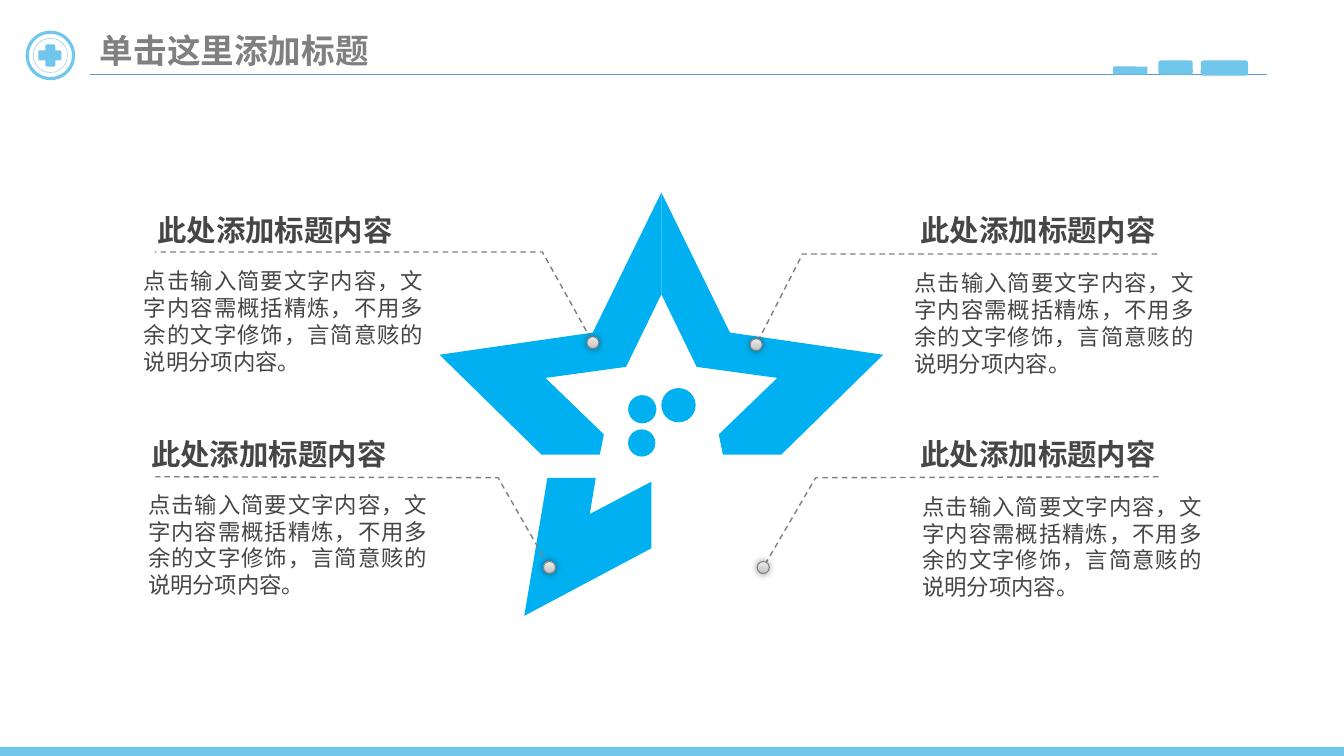
from dataclasses import dataclass

from lxml import etree
from pptx import Presentation
from pptx import util as u
from pptx.dml.color import RGBColor
from pptx.enum import dml, shapes, text
from pptx.oxml import parse_xml
from pptx.oxml.ns import nsdecls, qn

SCALE = 9144


@dataclass(frozen=True)
class Theme:
    face: str = "Noto Sans CJK SC"
    sky: str = "70C6EB"
    rule: str = "5B9BD5"
    star: str = "00B0F0"
    gray: str = "808080"
    ink: str = "464646"
    title: int = 24
    head: int = 21
    body: int = 16


THEME = Theme()
KIND = shapes.MSO_SHAPE
HEAD = "此处添加标题内容"
BODY = "点击输入简要文字内容，文字内容需概括精炼，不用多余的文字修饰，言简意赅的说明分项内容。"

AXIS = 656
WING = [(724, 330), (656, 191), (656, 292), (691, 364), (771, 375),
        (713, 431), (717, 451), (775, 451), (876, 352)]
LEG = [(646, 478), (585, 510), (591, 474), (543, 474), (520, 611), (646, 544)]
DOTS = [(623, 392, 28), (656, 385, 34), (623, 426, 27)]
BARS = [(1104, 66, 34, 8), (1149, 60, 34, 14), (1191, 60, 47, 15)]
CALLS = [
    ((143, 186, 287, 67), (133, 260), [(588, 340), (538, 250), (154, 250)]),
    ((900, 186, 274, 66), (897, 262), [(750, 342), (796, 252), (1149, 252)]),
    ((900, 408, 274, 66), (905, 484), [(757, 563), (809, 474), (1152, 473)]),
    ((137, 408, 287, 67), (137, 482), [(545, 563), (494, 474), (154, 473)]),
]

SHEEN = f"""<a:gradFill {nsdecls('a')} rotWithShape="1"><a:gsLst>
<a:gs pos="0"><a:srgbClr val="BDBDBD"/></a:gs>
<a:gs pos="35000"><a:srgbClr val="D1D1D1"/></a:gs>
<a:gs pos="100000"><a:srgbClr val="EEEEEE"/></a:gs>
</a:gsLst><a:lin ang="16200000" scaled="1"/></a:gradFill>"""
SHADE = f"""<a:outerShdw {nsdecls('a')} blurRad="63500" dist="0" dir="0">
<a:srgbClr val="000000"><a:alpha val="40000"/></a:srgbClr></a:outerShdw>"""


def px(*vals):
    return [u.Emu(val * SCALE) for val in vals]


def paint(shape, fill=None, line=None, width=1, dash=None):
    shape.shadow.inherit = False
    if fill:
        shape.fill.solid()
        shape.fill.fore_color.rgb = RGBColor.from_string(fill)
    else:
        shape.fill.background()
    if line:
        shape.line.color.rgb = RGBColor.from_string(line)
        shape.line.width = u.Pt(width)
        if dash:
            shape.line.dash_style = dash
    else:
        shape.line.fill.background()
    return shape


def block(tree, kind, at, **look):
    return paint(tree.add_shape(kind, *px(*at)), **look)


def trace(tree, spots, close=True, **look):
    pen = tree.build_freeform(*spots[0], scale=SCALE)
    pen.add_line_segments(spots[1:], close=close)
    return paint(pen.convert_to_shape(), **look)


def write(shape, words, size, color, bold=False, wrap=True, align=None, space=None):
    frame = shape.text_frame
    frame.word_wrap = wrap
    frame.auto_size = text.MSO_AUTO_SIZE.SHAPE_TO_FIT_TEXT
    frame.vertical_anchor = text.MSO_ANCHOR.TOP
    frame.text = words
    para = frame.paragraphs[0]
    para.alignment = align or text.PP_ALIGN.LEFT
    para.line_spacing = space
    font = para.font
    font.size = u.Pt(size)
    font.bold = bold
    font.color.rgb = RGBColor.from_string(color)
    font.name = THEME.face
    props = para._p.pPr.find(qn("a:defRPr"))
    etree.SubElement(props, qn("a:ea"), typeface=THEME.face)
    return frame


def title(slide):
    shape = slide.shapes.title
    shape.left, shape.top, shape.width, shape.height = px(89, 25, 289, 50)
    write(shape, "单击这里添加标题", THEME.title, THEME.gray, bold=True, wrap=False)


def badge(slide):
    tree = slide.shapes.add_group_shape().shapes
    block(tree, KIND.OVAL, (27, 32, 46, 46), line=THEME.sky, width=2.25)
    block(tree, KIND.OVAL, (33, 38, 34, 34), line=THEME.sky, width=0.5,
          dash=dml.MSO_LINE.ROUND_DOT)
    for at in [(45, 44, 10, 22), (38, 50, 23, 10)]:
        block(tree, KIND.ROUNDED_RECTANGLE, at, fill=THEME.sky)


def trim(slide):
    tree = slide.shapes
    rule = tree.add_connector(shapes.MSO_CONNECTOR.STRAIGHT, *px(89, 74, 1257, 74))
    rule.line.color.rgb = RGBColor.from_string(THEME.rule)
    rule.line.width = u.Pt(0.5)
    etree.SubElement(rule._element.spPr, qn("a:effectLst"))
    for at in BARS:
        block(tree, KIND.ROUNDED_RECTANGLE, at, fill=THEME.sky)
    block(tree, KIND.RECTANGLE, (0, 741, 1333, 9), fill=THEME.sky)


def star(slide):
    tree = slide.shapes.add_group_shape().shapes
    mirror = [(2 * AXIS - x, y) for x, y in WING]
    for spots in (LEG, WING, mirror):
        trace(tree, spots, fill=THEME.star)
    for x, y, size in DOTS:
        block(tree, KIND.OVAL, (x, y, size, size), fill=THEME.star)


def leader(slide, spots):
    tree = slide.shapes.add_group_shape().shapes
    path = trace(tree, spots, close=False, line=THEME.gray, dash=dml.MSO_LINE.DASH)
    etree.SubElement(path.line._get_or_add_ln(), qn("a:headEnd"), type="oval")
    x, y = spots[0]
    knob = block(tree, KIND.OVAL, (x - 6, y - 6, 12, 12), line=THEME.gray, width=0.75)
    props = knob._element.spPr
    props.replace(props.find(qn("a:noFill")), parse_xml(SHEEN))
    props.find(qn("a:effectLst")).append(parse_xml(SHADE))


def label(slide, head, body):
    box = slide.shapes.add_textbox(*px(*head))
    frame = write(box, HEAD, THEME.head, THEME.ink, bold=True, space=1.5)
    frame.margin_left = frame.margin_right = px(13)[0]
    frame.margin_top = frame.margin_bottom = px(7)[0]
    box = slide.shapes.add_textbox(*px(*body, 297, 118))
    write(box, BODY, THEME.body, THEME.ink, align=text.PP_ALIGN.JUSTIFY)


def main():
    deck = Presentation()
    deck.slide_width, deck.slide_height = px(1333, 750)
    slide = deck.slides.add_slide(deck.slide_layouts[5])
    title(slide)
    badge(slide)
    trim(slide)
    star(slide)
    for head, body, spots in CALLS:
        leader(slide, spots)
        label(slide, head, body)
    deck.save("out.pptx")


if __name__ == "__main__":
    main()
